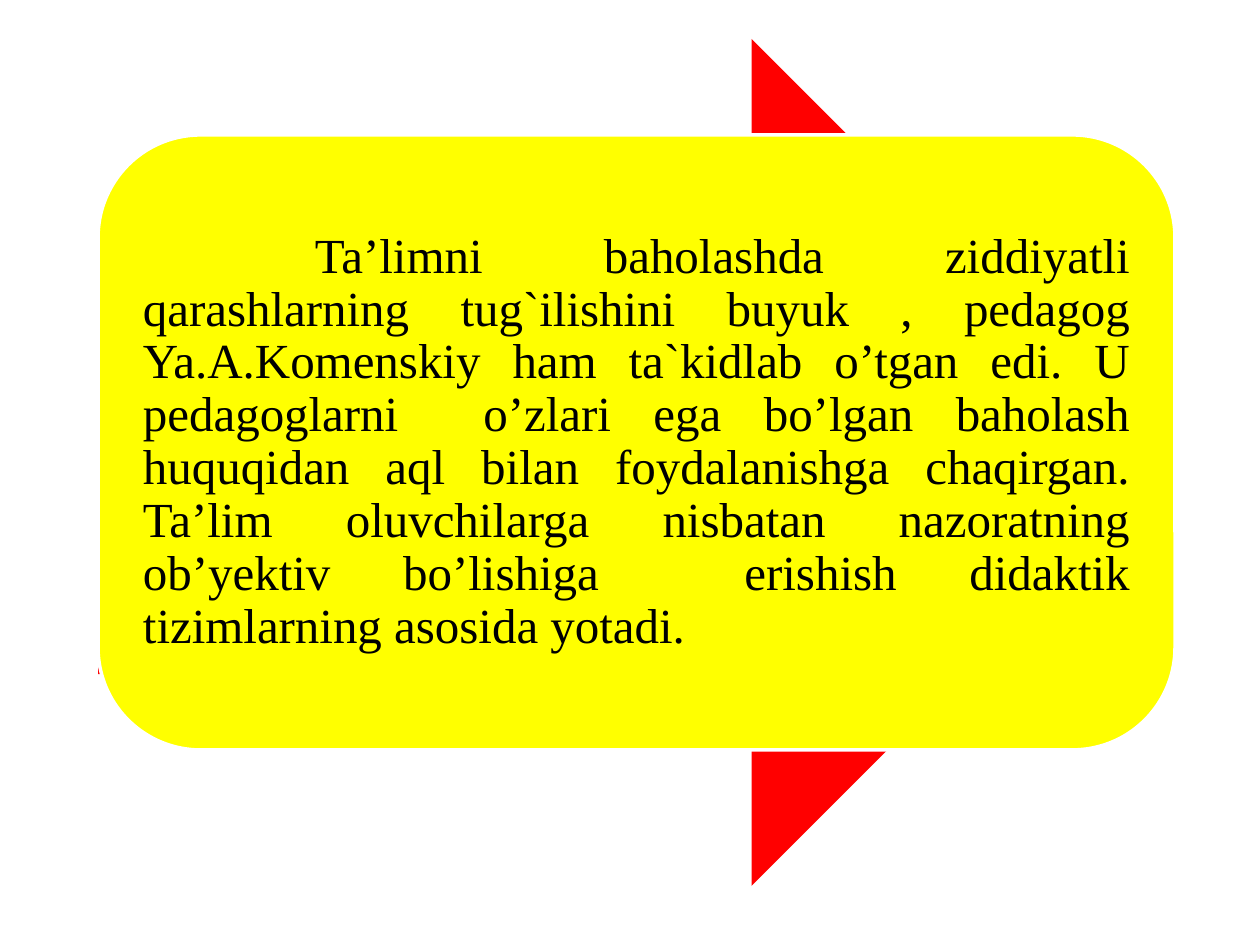
from dataclasses import dataclass

from pptx import Presentation
from pptx.dml.color import RGBColor as RGB
from pptx.enum.shapes import MSO_SHAPE as Shape
from pptx.enum.text import MSO_ANCHOR as Anchor, PP_ALIGN as Align
from pptx.util import Pt

PX = 914400 / 126  # EMU in one px
COLORS = {"arrow": "FF0000", "card": "FFFF00", "edge": "FFFFFF", "text": "000000"}
FONT = "Times New Roman"
TEXT = (
    "\tTa’limni baholashda ziddiyatli qarashlarning tug`ilishini buyuk , pedagog "
    "Ya.A.Komenskiy ham ta`kidlab o’tgan edi. U pedagoglarni  o’zlari ega bo’lgan "
    "baholash huquqidan aql bilan foydalanishga chaqirgan. Ta’lim oluvchilarga "
    "nisbatan nazoratning ob’yektiv bo’lishiga  erishish didaktik tizimlarning "
    "asosida yotadi."
)


@dataclass
class Box:
    x: int
    y: int
    w: int
    h: int

    def emu(self) -> list[int]:
        return [px(v) for v in (self.x, self.y, self.w, self.h)]


@dataclass
class Panel:
    kind: Shape
    box: Box
    fill: str
    edge: str | None = None


def px(n: int) -> int:
    return round(n * PX)


def color(name: str) -> RGB:
    return RGB.from_string(COLORS[name])


def draw_panel(s, panel: Panel) -> None:
    sp = s.shapes.add_shape(panel.kind, *panel.box.emu())
    sp.shadow.inherit = False
    sp.fill.solid()
    sp.fill.fore_color.rgb = color(panel.fill)
    if panel.edge:
        sp.line.color.rgb = color(panel.edge)
        sp.line.width = Pt(2)
    else:
        sp.line.fill.background()


def draw_text(s, text: str, box: Box, *, size: int, fill: str, inset: int,
              spacing: float, after: int, tab: int) -> None:
    tf = s.shapes.add_textbox(*box.emu()).text_frame
    tf.word_wrap = True
    tf.vertical_anchor = Anchor.MIDDLE
    tf.margin_left = tf.margin_right = tf.margin_top = tf.margin_bottom = px(inset)
    p = tf.paragraphs[0]
    p.alignment = Align.JUSTIFY
    p.line_spacing = spacing
    p.space_after = Pt(after)
    p._p.get_or_add_pPr().set("defTabSz", str(px(tab)))
    r = p.add_run()
    r.text = text
    r.font.name = FONT
    r.font.size = Pt(size)
    r.font.color.rgb = color(fill)


def main() -> None:
    prs = Presentation()
    prs.slide_width, prs.slide_height = px(1260), px(945)
    s = prs.slides.add_slide(prs.slide_layouts[6])

    # Arrow behind, card in front
    for panel in (
        Panel(Shape.RIGHT_ARROW, Box(98, 39, 1077, 847), "arrow"),
        Panel(Shape.ROUNDED_RECTANGLE, Box(98, 135, 1077, 615), "card", "edge"),
    ):
        draw_panel(s, panel)

    # Paragraph on the card
    draw_text(s, TEXT, Box(128, 165, 1017, 555), size=28, fill="text", inset=15,
              spacing=0.9, after=10, tab=172)

    prs.save("out.pptx")


if __name__ == "__main__":
    main()
